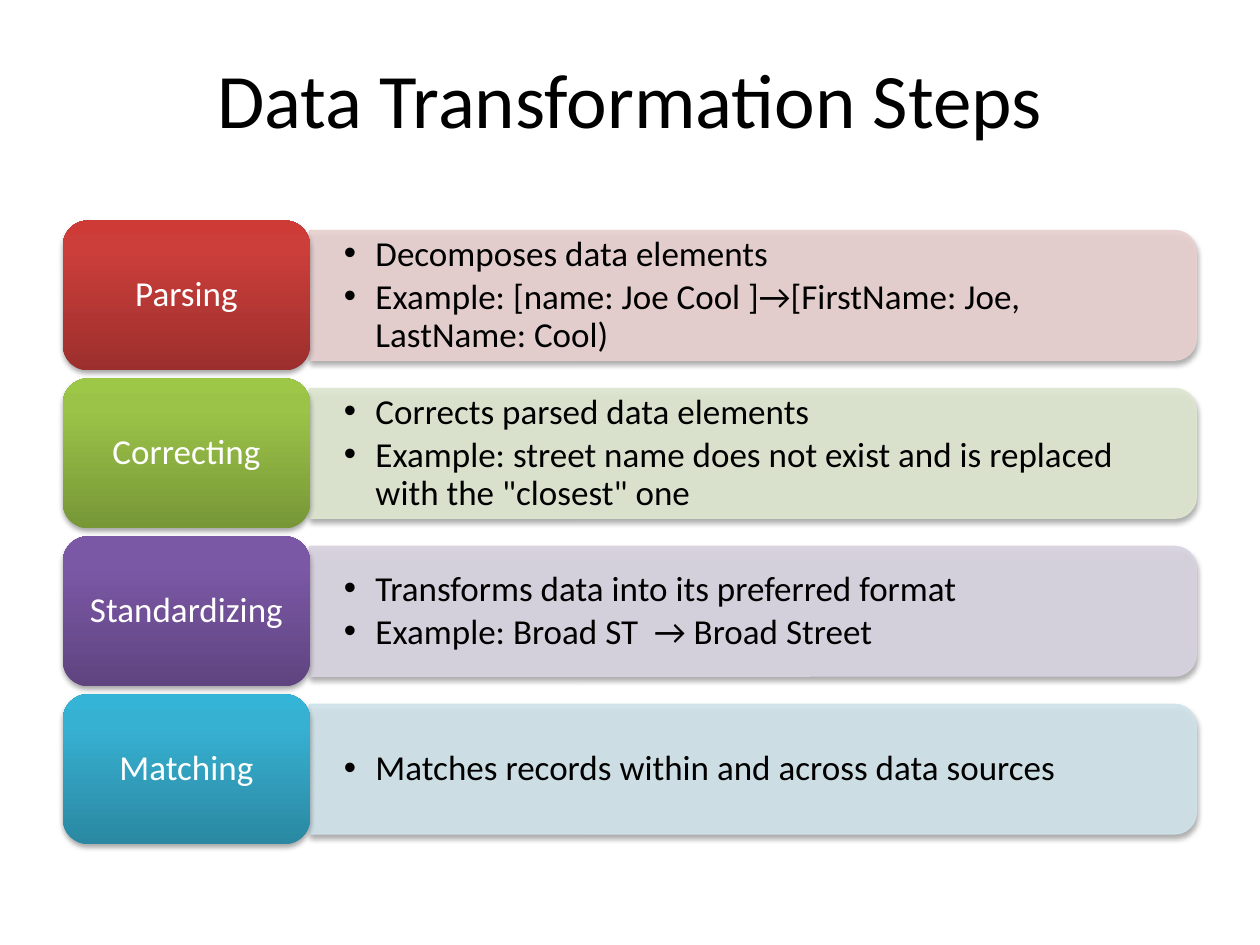
import pptx
import pptx.util
import pptx.oxml
import pptx.oxml.ns
import pptx.dml.color
import pptx.enum.shapes
import pptx.enum.text
from pptx.util import Inches

NS = pptx.oxml.ns.nsdecls("a")
KIND = pptx.enum.shapes.MSO_SHAPE
ALIGN = pptx.enum.text.PP_ALIGN
SHADOW = (f'<a:effectLst {NS}><a:outerShdw blurRad="39370" dist="22860" dir="5400000" rotWithShape="0">'
          '<a:srgbClr val="000000"><a:alpha val="35000"/></a:srgbClr></a:outerShdw></a:effectLst>')


def color(code):
    return pptx.dml.color.RGBColor.from_string(code)


def write(shape, lines, size, ink, align, pad=(0.1, 0.05), bullet=False):
    frame = shape.text_frame
    frame.word_wrap = True
    frame.vertical_anchor = pptx.enum.text.MSO_ANCHOR.MIDDLE
    frame.margin_left = frame.margin_right = Inches(pad[0])
    frame.margin_top = frame.margin_bottom = Inches(pad[1])
    frame.text = "\n".join(lines)
    for para in frame.paragraphs:
        para.alignment = align
        para.line_spacing = 0.9 if size == 20 else 1
        if bullet:
            para.level = 1
            para.space_after = pptx.util.Pt(3)
            props = para._p.get_or_add_pPr()
            props.set("marL", str(Inches(0.25)))
            props.set("indent", str(Inches(-0.25)))
            props.append(pptx.oxml.parse_xml(f'<a:buFont {NS} typeface="Arial"/>'))
            props.append(pptx.oxml.parse_xml(f'<a:buChar {NS} char="•"/>'))
        para.font.name = "Calibri"
        para.font.size = pptx.util.Pt(size)
        para.font.color.rgb = color(ink)


steps = [
    ("Parsing", "E8D0D0", ("9C2F2D", "CB3E3A", "CE3B37"),
     ["Decomposes data elements",
      "Example: [name: Joe Cool ]→[FirstName: Joe, LastName: Cool)"]),
    ("Correcting", "DEE7D1", ("779737", "9BC348", "9DC746"),
     ["Corrects parsed data elements",
      'Example: street name does not exist and is replaced with the "closest" one']),
    ("Standardizing", "D8D3E0", ("5F4480", "7B58A6", "7C57A8"),
     ["Transforms data into its preferred format",
      "Example: Broad ST  → Broad Street"]),
    ("Matching", "D0E3EA", ("2A88A2", "37B1D2", "34B4D6"),
     ["Matches records within and across data sources"]),
]

deck = pptx.Presentation()
deck.slide_width, deck.slide_height = Inches(10), Inches(7.5)
shapes = deck.slides.add_slide(deck.slide_layouts[6]).shapes

title = shapes.add_textbox(Inches(0.5), Inches(0.3), Inches(9), Inches(0.95))
write(title, ["Data Transformation Steps"], 44, "000000", ALIGN.CENTER)

first, last, high = 1.75, 5.51, 1.19
pitch = (last - first) / (len(steps) - 1)
thick, long = 1.03, 7.04

for row, (name, pale, shades, notes) in enumerate(steps):
    top = first + row * pitch
    mid = top + high / 2

    bar = shapes.add_shape(KIND.ROUND_2_SAME_RECTANGLE, Inches(5.46),
                           Inches(mid - long / 2), Inches(thick), Inches(long))
    bar.rotation = 90
    bar.fill.solid()
    bar.fill.fore_color.rgb = color(pale)
    bar.line.color.rgb = color(pale)
    bar.line.width = pptx.util.Pt(0.75)
    props = bar._element.spPr
    for tint in props.iter(pptx.oxml.ns.qn("a:srgbClr")):
        tint.append(pptx.oxml.parse_xml(f'<a:alpha {NS} val="90000"/>'))
    props.append(pptx.oxml.parse_xml(SHADOW))

    body = shapes.add_textbox(Inches(2.46), Inches(mid - 0.93 / 2), Inches(6.99), Inches(0.93))
    write(body, notes, 20, "000000", ALIGN.LEFT, (0.27, 0.14), True)

    tile = shapes.add_shape(KIND.ROUNDED_RECTANGLE, Inches(0.5), Inches(top),
                            Inches(1.96), Inches(high))
    tile.line.fill.background()
    stops = "".join(f'<a:gs pos="{place}"><a:srgbClr val="{shade}"/></a:gs>'
                    for place, shade in zip((0, 80000, 100000), shades))
    blend = (f'<a:gradFill {NS} rotWithShape="1"><a:gsLst>{stops}</a:gsLst>'
             '<a:lin ang="16200000" scaled="0"/></a:gradFill>')
    props = tile._element.spPr
    props.insert(2, pptx.oxml.parse_xml(blend))
    props.append(pptx.oxml.parse_xml(SHADOW))
    write(tile, [name], 20, "FFFFFF", ALIGN.CENTER, (0.08, 0.04))

deck.save("out.pptx")
